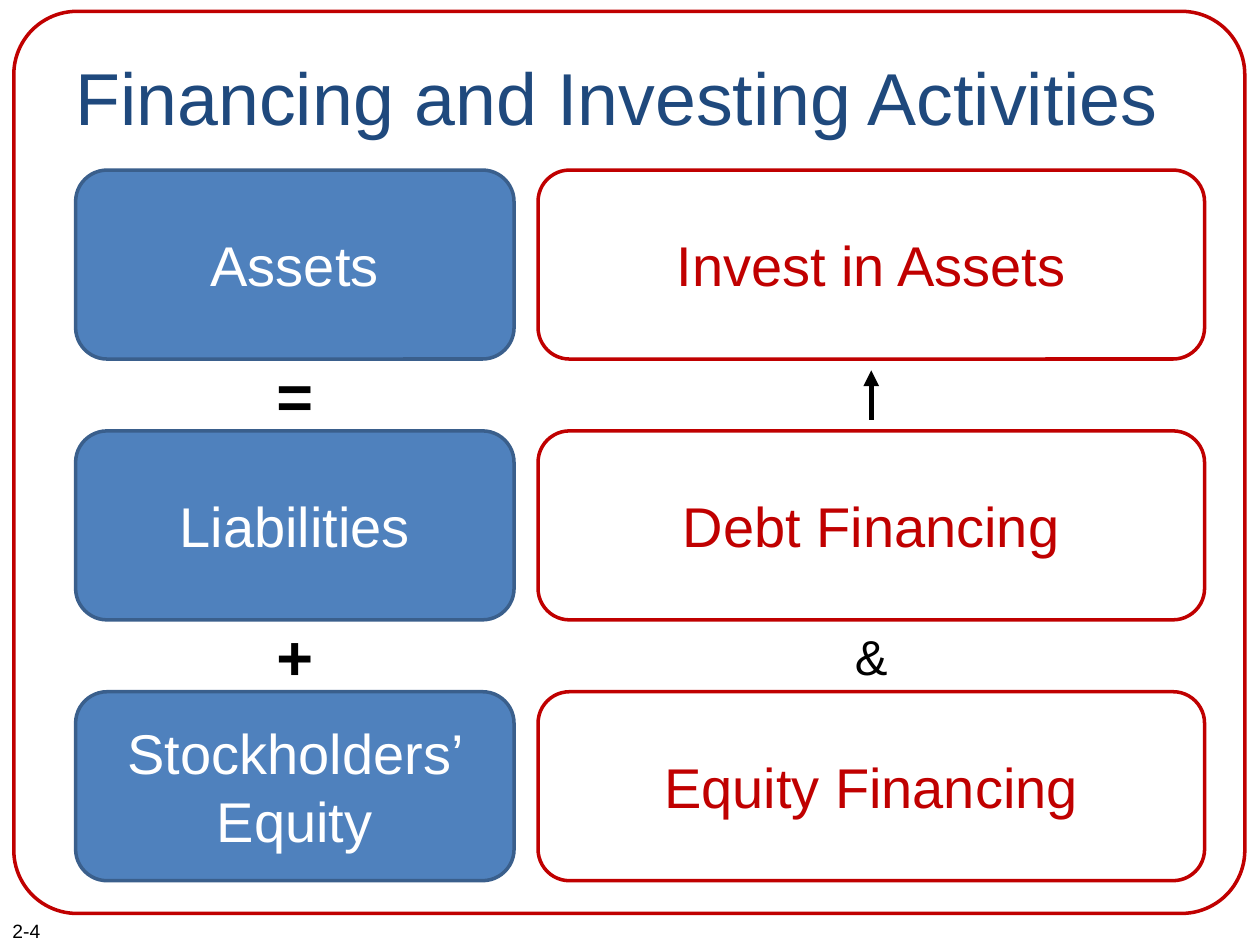
"""Build the Financing and Investing Activities slide."""
from lxml import etree
from pptx import Presentation
from pptx.dml.color import RGBColor
from pptx.enum.shapes import MSO_CONNECTOR, MSO_SHAPE
from pptx.enum.text import MSO_ANCHOR, PP_ALIGN
from pptx.oxml.ns import qn
from pptx.util import Inches, Pt

ROUNDED, STRAIGHT = MSO_SHAPE.ROUNDED_RECTANGLE, MSO_CONNECTOR.STRAIGHT
LEFT, CENTER = PP_ALIGN.LEFT, PP_ALIGN.CENTER
TOP, MIDDLE = MSO_ANCHOR.TOP, MSO_ANCHOR.MIDDLE

TITLE = "Financing and Investing Activities"
PAGE = "2-4"
ROWS = [
    ("Assets", "Invest in Assets"),
    ("Liabilities", "Debt Financing"),
    ("Stockholders’ Equity", "Equity Financing"),
]
OPERATORS = ["=", "+"]
COLORS = {
    "red": "C00000", "blue": "4F81BD", "blue_edge": "3A5F8C",
    "navy": "1F497D", "white": "FFFFFF", "black": "000000",
}
COLUMNS = [
    {"left": 0.6, "width": 3.48, "fill": "blue", "line": "blue_edge", "text": "white"},
    {"left": 4.27, "width": 5.29, "fill": "white", "line": "red", "text": "red"},
]
ROW_TOP, ROW_HEIGHT, ROW_PITCH = 1.35, 1.5, 2.07
GAP = ROW_PITCH - ROW_HEIGHT
SIGN_WIDTH = 1.33


def rgb(name):
    return RGBColor.from_string(COLORS[name])


def write(shape, text, size, color, align=CENTER, anchor=TOP, bold=False):
    tf = shape.text_frame
    tf.word_wrap = True
    tf.vertical_anchor = anchor
    tf.text = text
    p = tf.paragraphs[0]
    p.alignment = align
    font = p.runs[0].font
    font.name, font.size, font.bold = "Arial", Pt(size), bold
    font.color.rgb = rgb(color)


def add_text(slide, box, text, size, color, **style):
    s = slide.shapes.add_textbox(*map(Inches, box))
    write(s, text, size, color, **style)
    return s


def add_box(slide, box, line, fill=None):
    s = slide.shapes.add_shape(ROUNDED, *map(Inches, box))
    s.shadow.inherit = False
    if fill:
        s.fill.solid()
        s.fill.fore_color.rgb = rgb(fill)
    else:
        s.fill.background()
    s.line.color.rgb = rgb(line)
    s.line.width = Pt(2)
    return s


def add_sign(slide, column, row, height, text, size, bold):
    left = column["left"] + (column["width"] - SIGN_WIDTH) / 2
    top = ROW_TOP + row * ROW_PITCH + ROW_HEIGHT + (GAP - height) / 2
    add_text(slide, (left, top, SIGN_WIDTH, height), text, size, "black", bold=bold)


def add_arrow(slide, x, start, end):
    s = slide.shapes.add_connector(
        STRAIGHT, Inches(x), Inches(start), Inches(x), Inches(end))
    s.line.color.rgb = rgb("black")
    s.line.width = Pt(3)
    etree.SubElement(s.line._get_or_add_ln(), qn("a:tailEnd"), type="triangle")
    etree.SubElement(s._element.spPr, qn("a:effectLst"))


def main():
    prs = Presentation()
    prs.slide_width, prs.slide_height = Inches(10), Inches(7.5)
    slide = prs.slides.add_slide(prs.slide_layouts[6])

    add_text(slide, (0, 7.25, 1.42, 0.29), PAGE, 11, "black", align=LEFT)
    frame = add_box(slide, (0.11, 0.09, 9.77, 7.16), "red")
    frame.adjustments[0] = 0.07
    title = add_text(slide, (0.5, 0.3, 9, 1.25), TITLE, 42, "navy", align=LEFT)
    title.text_frame.margin_top = Inches(0.11)

    for row, labels in enumerate(ROWS):
        top = ROW_TOP + row * ROW_PITCH
        for column, label in zip(COLUMNS, labels):
            box = (column["left"], top, column["width"], ROW_HEIGHT)
            s = add_box(slide, box, column["line"], column["fill"])
            write(s, label, 32, column["text"], anchor=MIDDLE)

    accounts, activities = COLUMNS
    for row, sign in enumerate(OPERATORS):
        add_sign(slide, accounts, row, 0.71, sign, 36, True)
    add_sign(slide, activities, 1, 0.57, "&", 28, False)
    add_arrow(slide, activities["left"] + activities["width"] / 2, 3.33, 2.94)

    prs.save("out.pptx")


if __name__ == "__main__":
    main()
